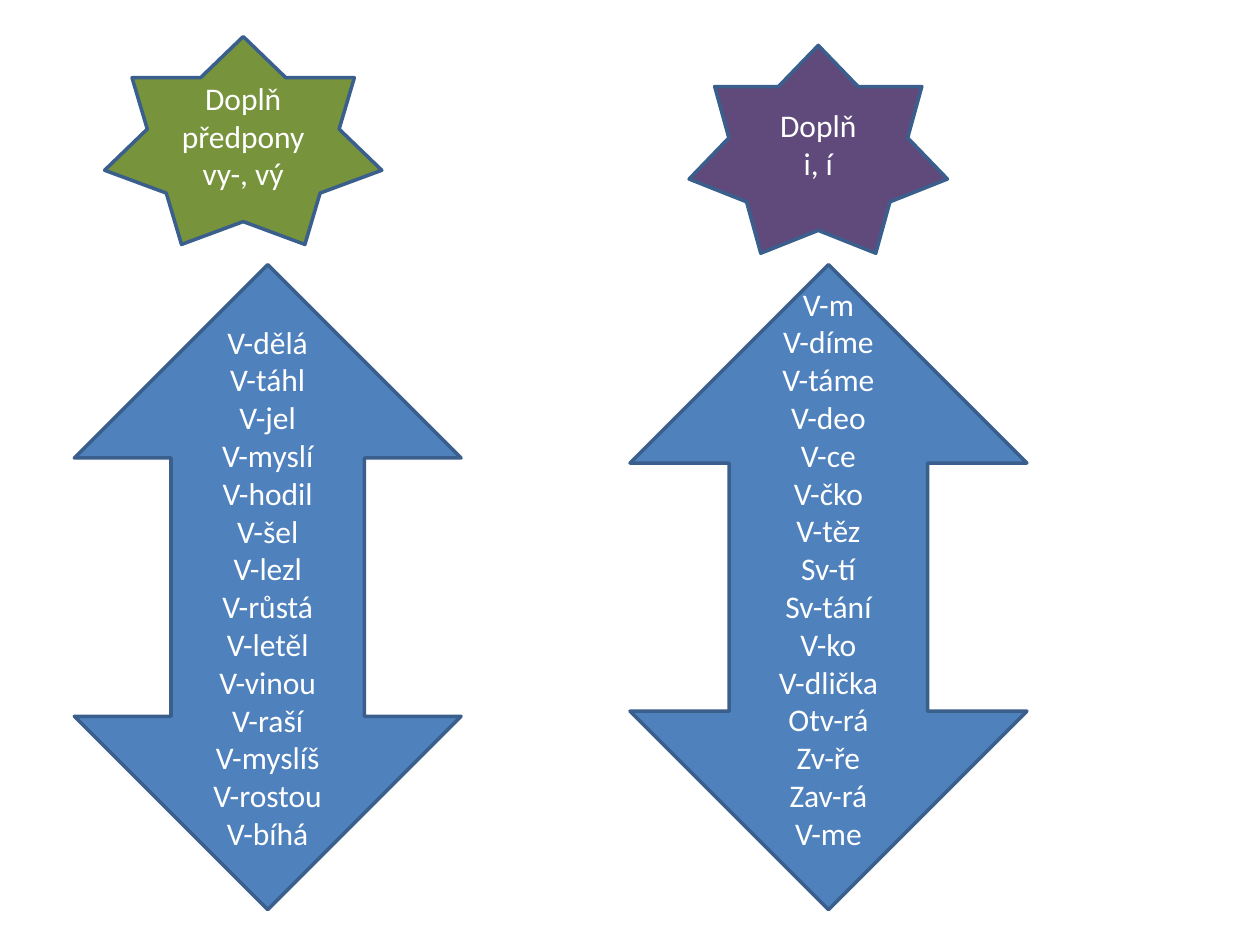
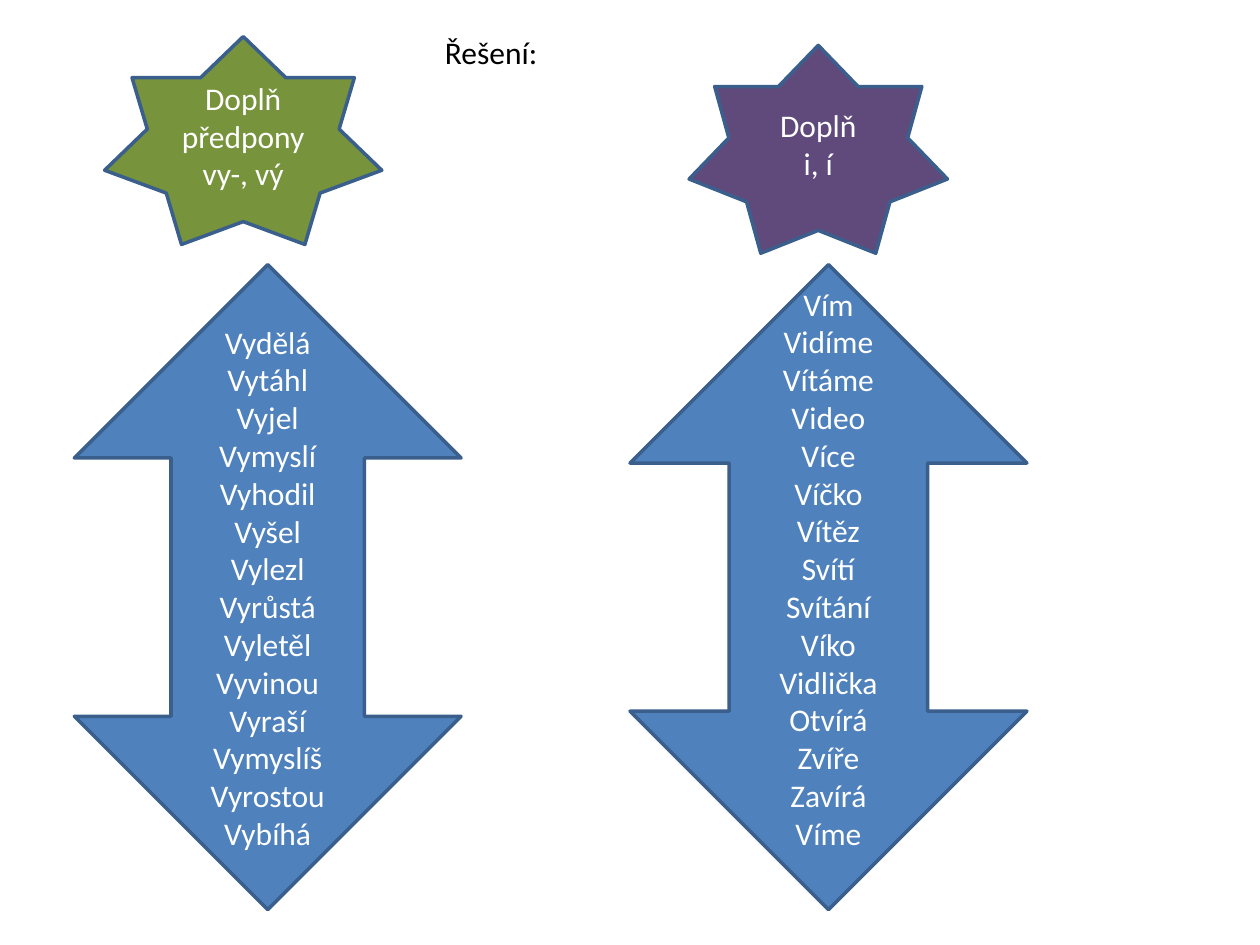
from pptx import Presentation
from pptx.dml.color import RGBColor
from pptx.enum.shapes import MSO_SHAPE
from pptx.enum.text import MSO_ANCHOR, PP_ALIGN
from pptx.util import Pt

COLORS = {
    "green": "77933C",
    "purple": "604A7B",
    "blue": "4F81BD",
    "outline": "3A5F8C",
    "white": "FFFFFF",
    "black": "000000",
}
FONT, SIZE = "Calibri", 18
LINE_HEIGHT = 21.6

# Solved words; the exercise hides the first y, i or í of each
PREFIX_WORDS = [
    "Vydělá", "Vytáhl", "Vyjel", "Vymyslí", "Vyhodil", "Vyšel", "Vylezl",
    "Vyrůstá", "Vyletěl", "Vyvinou", "Vyraší", "Vymyslíš", "Vyrostou", "Vybíhá",
]
I_WORDS = [
    "Vím", "Vidíme", "Vítáme", "Video", "Více", "Víčko", "Vítěz", "Svítí",
    "Svítání", "Víko", "Vidlička", "Otvírá", "Zvíře", "Zavírá", "Víme",
]


def rgb(name):
    return RGBColor.from_string(COLORS[name])


def hide_letter(word):
    letter = next(c for c in word if c in "yií")
    return word.replace(letter, "-", 1)


def write(tf, lines, color, align):
    tf.word_wrap = True
    tf.text = "\n".join(lines)
    for p in tf.paragraphs:
        p.alignment = align
        for r in p.runs:
            r.font.name = FONT
            r.font.size = Pt(SIZE)
            r.font.color.rgb = rgb(color)


def add_figure(s, kind, box, fill, lines):
    sp = s.shapes.add_shape(kind, *map(Pt, box))
    sp.shadow.inherit = False
    sp.fill.solid()
    sp.fill.fore_color.rgb = rgb(fill)
    sp.line.color.rgb = rgb("outline")
    sp.line.width = Pt(2)
    sp.text_frame.vertical_anchor = MSO_ANCHOR.MIDDLE
    write(sp.text_frame, lines, "white", PP_ALIGN.CENTER)
    return sp


def add_star(s, box, fill, lines):
    add_figure(s, MSO_SHAPE.STAR_7_POINT, box, fill, lines)


def add_arrow(s, left, width, words, lift=0):
    box = (left, 151.2, width, 368.6)
    sp = add_figure(s, MSO_SHAPE.UP_DOWN_ARROW, box, "blue", words)
    sp.text_frame.margin_bottom = Pt(3.6 + lift)


def add_title(s, text):
    sp = s.shapes.title
    sp.left, sp.top, sp.width, sp.height = map(Pt, (247, 15.1, 96.5, 29))
    sp.text_frame.vertical_anchor = MSO_ANCHOR.TOP
    write(sp.text_frame, [text], "black", PP_ALIGN.LEFT)


def add_exercise(s, prefix_words, i_words):
    # Task stars
    add_star(s, (59.8, 20.9, 158.4, 118.8), "green", ["Doplň předpony vy-, vý"])
    add_star(s, (393.8, 25.9, 147.6, 118.8), "purple", ["Doplň", "i, í"])
    # Word columns, the right one raised by half a line
    add_arrow(s, 42.5, 221, prefix_words)
    add_arrow(s, 360, 226.8, i_words, lift=LINE_HEIGHT)


def main():
    prs = Presentation()
    prs.slide_width, prs.slide_height = Pt(720), Pt(540)
    title_only, blank = prs.slide_layouts[5], prs.slide_layouts[6]

    # Exercise
    s = prs.slides.add_slide(blank)
    add_exercise(s, map(hide_letter, PREFIX_WORDS), map(hide_letter, I_WORDS))

    # Solution
    s = prs.slides.add_slide(title_only)
    add_exercise(s, PREFIX_WORDS, I_WORDS)
    add_title(s, "Řešení:")

    prs.save("out.pptx")


if __name__ == "__main__":
    main()
